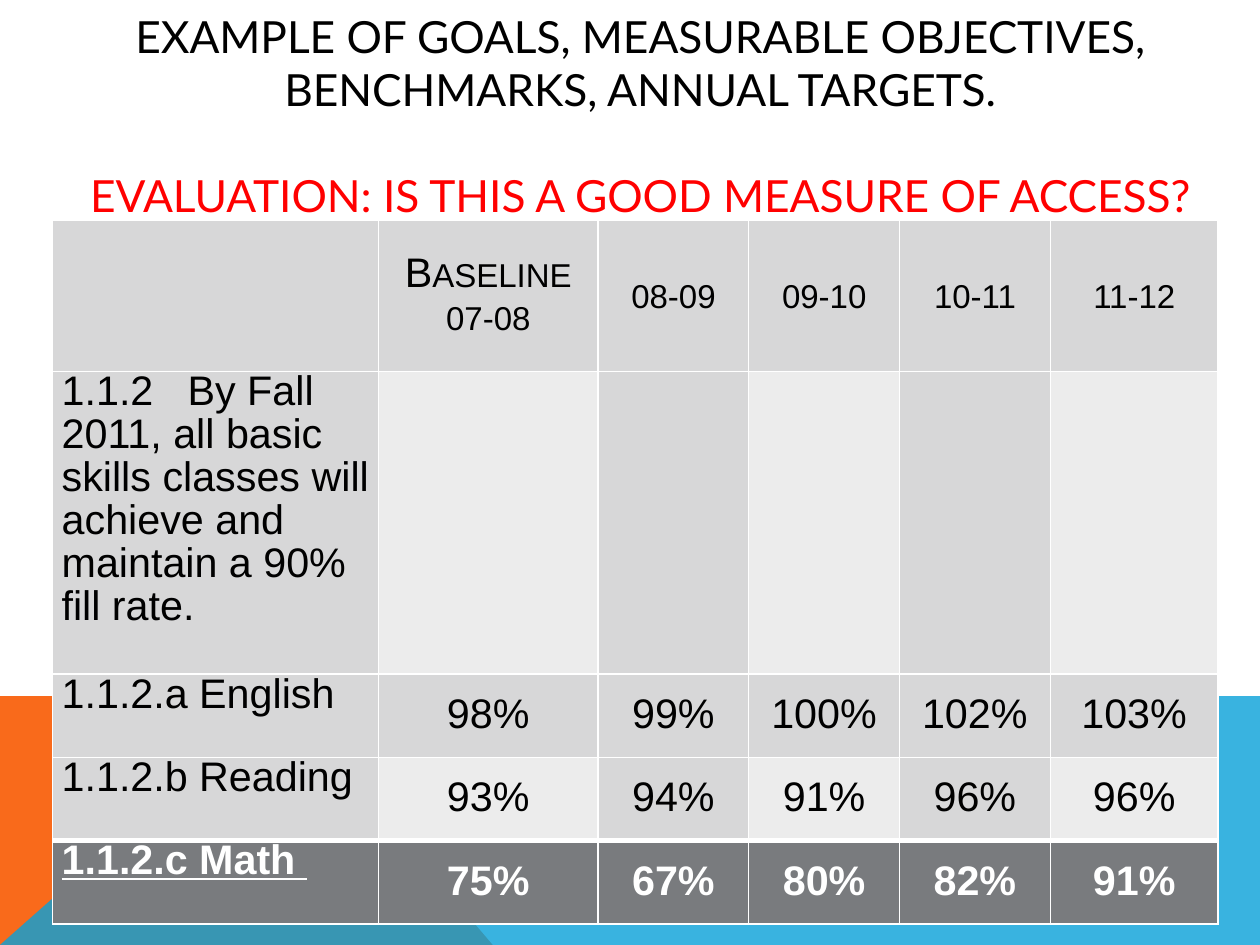
from lxml.etree import SubElement
from pptx import Presentation
from pptx.dml.color import RGBColor
from pptx.enum.text import MSO_ANCHOR, PP_ALIGN
from pptx.oxml.ns import qn
from pptx.util import Cm, Pt


def paint(fill, color):
    fill.solid()
    fill.fore_color.rgb = RGBColor.from_string(color)


def add_run(p, text, size, font, color):
    r = p.add_run()
    r.text = text
    r.font.size = Pt(size)
    r.font.name = font
    paint(r.font.fill, color)
    return r


prs = Presentation()
prs.slide_width, prs.slide_height = Cm(28), Cm(21)
s = prs.slides.add_slide(prs.slide_layouts[6])

# Coloured bands along the bottom
BANDS = [
    ("F96A1B", 100, [(0, 21), (0, 15.47), (6.25, 15.47), (10.95, 21)]),
    ("08A1D9", 80, [(0, 21), (6.25, 15.47), (28, 15.47), (28, 21)]),
]
for color, opacity, points in BANDS:
    corners = [(Cm(x), Cm(y)) for x, y in points]
    builder = s.shapes.build_freeform(*corners[0])
    builder.add_line_segments(corners[1:], close=True)
    sp = builder.convert_to_shape()
    sp.shadow.inherit = False
    sp.line.fill.background()
    paint(sp.fill, color)
    if opacity < 100:
        srgb = sp.fill._xPr.find(qn("a:solidFill"))[0]
        SubElement(srgb, qn("a:alpha"), val=str(opacity * 1000))

# Title
TITLE = [
    ("EXAMPLE OF GOALS, MEASURABLE OBJECTIVES, BENCHMARKS, ANNUAL TARGETS.", "000000", 0),
    ("EVALUATION: IS THIS A GOOD MEASURE OF ACCESS?", "FF0000", 33.5),
]
tf = s.shapes.add_textbox(Cm(1.63), Cm(0.23), Cm(25.2), Cm(4.67)).text_frame
tf.word_wrap = True
tf.vertical_anchor = MSO_ANCHOR.MIDDLE
tf.margin_left = tf.margin_right = Cm(0.28)
tf.margin_top = tf.margin_bottom = Cm(0.15)
for i, (text, color, space) in enumerate(TITLE):
    p = tf.add_paragraph() if i else tf.paragraphs[0]
    p.alignment = PP_ALIGN.CENTER
    p.space_before = Pt(space)
    add_run(p, text, 27.9, "Lato", color)

# Table of fill rates
ROWS = [
    ["", "Baseline\n07-08", "08-09", "09-10", "10-11", "11-12"],
    ["1.1.2\tBy Fall 2011, all basic skills classes will achieve and "
     "maintain a 90% fill rate.", "", "", "", "", ""],
    ["1.1.2.a English", "98%", "99%", "100%", "102%", "103%"],
    ["1.1.2.b Reading", "93%", "94%", "91%", "96%", "96%"],
    ["1.1.2.c Math ", "75%", "67%", "80%", "82%", "91%"],
]
COL_WIDTHS = [7.24, 4.88, 3.35, 3.35, 3.35, 3.73]
ROW_HEIGHTS = [3.35, 6.73, 1.85, 1.85, 1.85]
LAST = len(ROWS) - 1

frame = s.shapes.add_table(len(ROWS), len(COL_WIDTHS), Cm(1.17), Cm(4.9),
                           Cm(sum(COL_WIDTHS)), Cm(sum(ROW_HEIGHTS)))
table = frame.table
for column, width in zip(table.columns, COL_WIDTHS):
    column.width = Cm(width)
for row, height in zip(table.rows, ROW_HEIGHTS):
    row.height = Cm(height)

for i, row in enumerate(ROWS):
    for j, text in enumerate(row):
        cell = table.cell(i, j)
        cell.margin_left = cell.margin_right = Cm(0.2)
        cell.margin_top = cell.margin_bottom = 0
        label = j == 0
        cell.vertical_anchor = MSO_ANCHOR.TOP if label else MSO_ANCHOR.MIDDLE

        thick = {"lnT": i == LAST, "lnB": i == LAST - 1}
        for side in ("lnL", "lnR", "lnT", "lnB"):
            width = Pt(3 if thick.get(side) else 1)
            ln = SubElement(cell._tc.get_or_add_tcPr(), qn(f"a:{side}"), w=str(width))
            SubElement(SubElement(ln, qn("a:solidFill")), qn("a:srgbClr"), val="FFFFFF")

        if i == LAST:
            paint(cell.fill, "797B7E")
        else:
            light = i in (1, 3) and j % 2 == 1
            paint(cell.fill, "ECECEC" if light else "D7D7D8")

        if not text:
            continue
        for k, line in enumerate(text.split("\n")):
            p = cell.text_frame.add_paragraph() if k else cell.text_frame.paragraphs[0]
            p.alignment = PP_ALIGN.LEFT if label else PP_ALIGN.CENTER
            p.line_spacing = 0.93
            if "\t" in line:
                tabs = SubElement(p._p.get_or_add_pPr(), qn("a:tabLst"))
                SubElement(tabs, qn("a:tab"), pos=str(Cm(2.8)), algn="l")
            r = add_run(p, line, 26, "Arial", "FFFFFF" if i == LAST else "000000")
            r.font.bold = i == LAST
            r.font.underline = i == LAST and label
            if i == 0:
                r.font._rPr.set("cap", "small")

prs.save("out.pptx")
